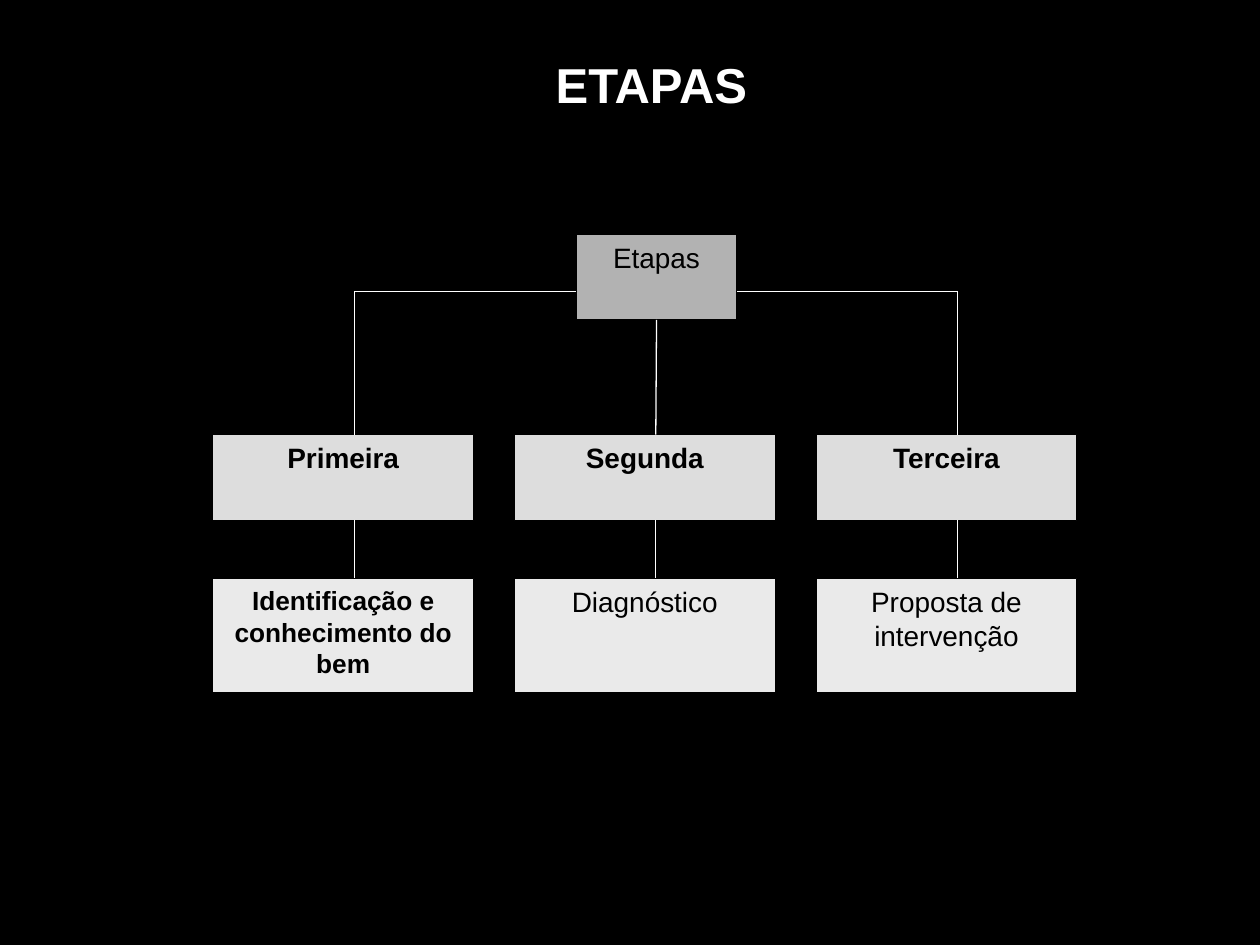
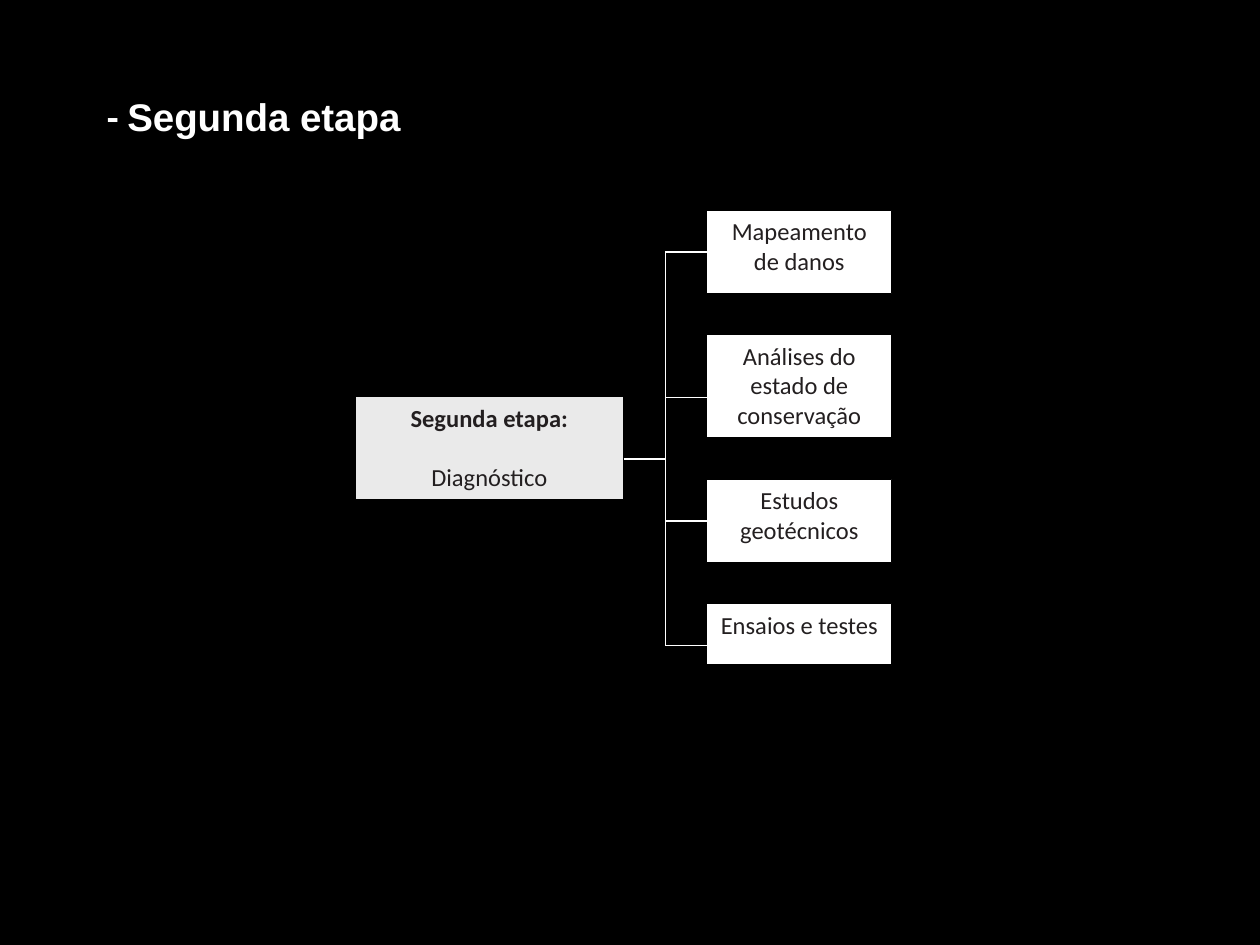
from dataclasses import dataclass
from typing import Optional

from lxml import etree
from pptx import Presentation
from pptx.dml.color import RGBColor
from pptx.enum import shapes, text
from pptx.oxml.ns import qn
from pptx.util import Cm, Pt

BLACK, WHITE, INK = "000000", "FFFFFF", "231F20"
DARK, MID, PALE = "B2B2B2", "DDDDDD", "EAEAEA"
THIN = Pt(0.75)
ALIGN = text.PP_ALIGN


@dataclass
class Node:
    """A box of the chart; lengths in centimetres."""
    words: str
    left: float
    top: float
    width: float
    height: float
    fill: str
    size: float = 16
    bold: bool = False
    font: str = "Arial"
    ink: str = BLACK


@dataclass
class Leaf:
    words: str
    height: float
    drop: float  # from the top of the box to its branch


def paint(target, colour: str) -> None:
    """Give a fill or a line one solid colour."""
    fill = getattr(target, "fill", target)
    fill.solid()
    fill.fore_color.rgb = RGBColor.from_string(colour)


def style(font, name: str, size: float, bold: bool, colour: str) -> None:
    font.name, font.size, font.bold = name, Pt(size), bold
    font.color.rgb = RGBColor.from_string(colour)


def head(slide, parts: list, place: tuple, size: float, align) -> None:
    """Fill the title from (words, font) pairs."""
    title = slide.shapes.title
    title.left, title.top, title.width, title.height = map(Cm, place)
    frame = title.text_frame
    frame.vertical_anchor = text.MSO_ANCHOR.TOP
    para = frame.paragraphs[0]
    para.alignment = align
    for words, font in parts:
        run = para.add_run()
        run.text = words
        style(run.font, font, size, True, WHITE)


def draw(slide, node: Node):
    box = slide.shapes.add_shape(
        shapes.MSO_SHAPE.RECTANGLE,
        *map(Cm, (node.left, node.top, node.width, node.height)))
    box.shadow.inherit = False
    paint(box.fill, node.fill)
    paint(box.line, BLACK)
    box.line.width = THIN
    frame = box.text_frame
    frame.word_wrap = True
    frame.vertical_anchor = text.MSO_ANCHOR.TOP
    frame.text = node.words
    for para in frame.paragraphs:
        para.alignment = ALIGN.CENTER
        for run in para.runs:
            style(run.font, node.font, node.size, node.bold, node.ink)
    return box


def link(slide, x1: float, y1: float, x2: float, y2: float,
         start: Optional[tuple] = None, end: Optional[tuple] = None) -> None:
    """Draw a line; start and end are (box, side) joints."""
    line = slide.shapes.add_connector(
        shapes.MSO_CONNECTOR.STRAIGHT, *map(Cm, (x1, y1, x2, y2)))
    paint(line.line, WHITE)
    line.line.width = THIN
    etree.SubElement(line.line._get_or_add_ln().getparent(), qn("a:effectLst"))
    if start:
        line.begin_connect(*start)
    if end:
        line.end_connect(*end)


def stages(slide) -> None:
    head(slide, [("ETAPAS", "Arial")], (1.7, 0.97, 22.86, 2), 28, ALIGN.CENTER)
    wide, pitch, left = 5.26, 6.08, 4.29
    step_y, step_h, task_y, task_h = 8.76, 1.73, 11.66, 2.31
    bar = 5.87
    root = Node("Etapas", 11.61, 4.72, 3.25, step_h, DARK)
    top = draw(slide, root)
    tasks = [("Primeira", "Identificação e conhecimento do bem", 15, True),
             ("Segunda", "Diagnóstico", 16, False),
             ("Terceira", "Proposta de intervenção", 16, False)]
    edges = [root.left, None, root.left + root.width]
    for i, (step, task, size, bold) in enumerate(tasks):
        x = left + i * pitch
        draw(slide, Node(step, x, step_y, wide, step_h, MID, bold=True))
        draw(slide, Node(task, x, task_y, wide, task_h, PALE, size, bold))
        stem = x + wide / 2 + 0.22
        link(slide, stem, step_y + step_h, stem, task_y)
        if edges[i] is None:
            link(slide, stem, root.top + root.height, stem, step_y, (top, 2))
        else:
            link(slide, edges[i], bar, stem, bar)
            link(slide, stem, bar, stem, step_y)


def second(slide) -> None:
    head(slide, [("- ", "Calibri"), ("Segunda etapa", "Arial")],
         (1.9, 1.75, 21.59, 2), 22, ALIGN.LEFT)
    look = dict(size=14, font="Calibri", ink=INK)
    root = Node("Segunda etapa:\nDiagnóstico", 7.16, 8, 5.41, 2.08, PALE, **look)
    paras = draw(slide, root).text_frame.paragraphs
    paras[0].runs[0].font.bold = True
    paras[1].space_before = Pt(17)

    leaves = [Leaf("Mapeamento de danos", 1.68, 0.84),
              Leaf("Análises do estado de conservação", 2.08, 1.27),
              Leaf("Estudos geotécnicos", 1.68, 0.84),
              Leaf("Ensaios e testes", 1.24, 0.84)]
    left, wide, gap, trunk, arm = 14.25, 3.73, 0.83, 13.41, 9.25
    y, ends = 4.24, []
    for leaf in leaves:
        box = draw(slide, Node(leaf.words, left, y, wide, leaf.height, WHITE, **look))
        ends.append(y + leaf.drop)
        joint = (box, 1) if leaf.drop * 2 == leaf.height else None
        link(slide, trunk, ends[-1], left, ends[-1], end=joint)
        y += leaf.height + gap
    link(slide, root.left + root.width, arm, trunk, arm)
    link(slide, trunk, ends[0], trunk, ends[-1])


def main() -> None:
    deck = Presentation()
    deck.slide_width, deck.slide_height = Cm(25.4), Cm(19.05)
    paint(deck.slide_master.background.fill, BLACK)
    for build in (stages, second):
        build(deck.slides.add_slide(deck.slide_layouts[5]))
    deck.save("out.pptx")


if __name__ == "__main__":
    main()
